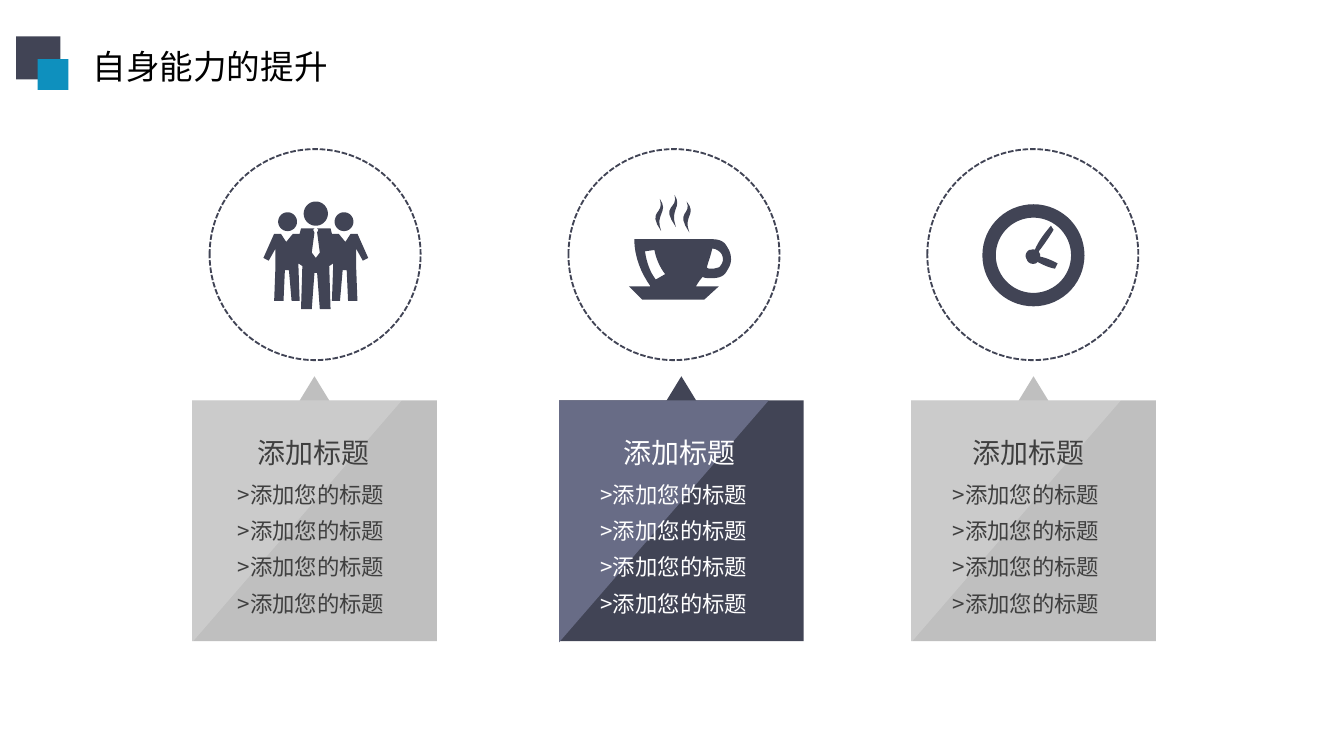
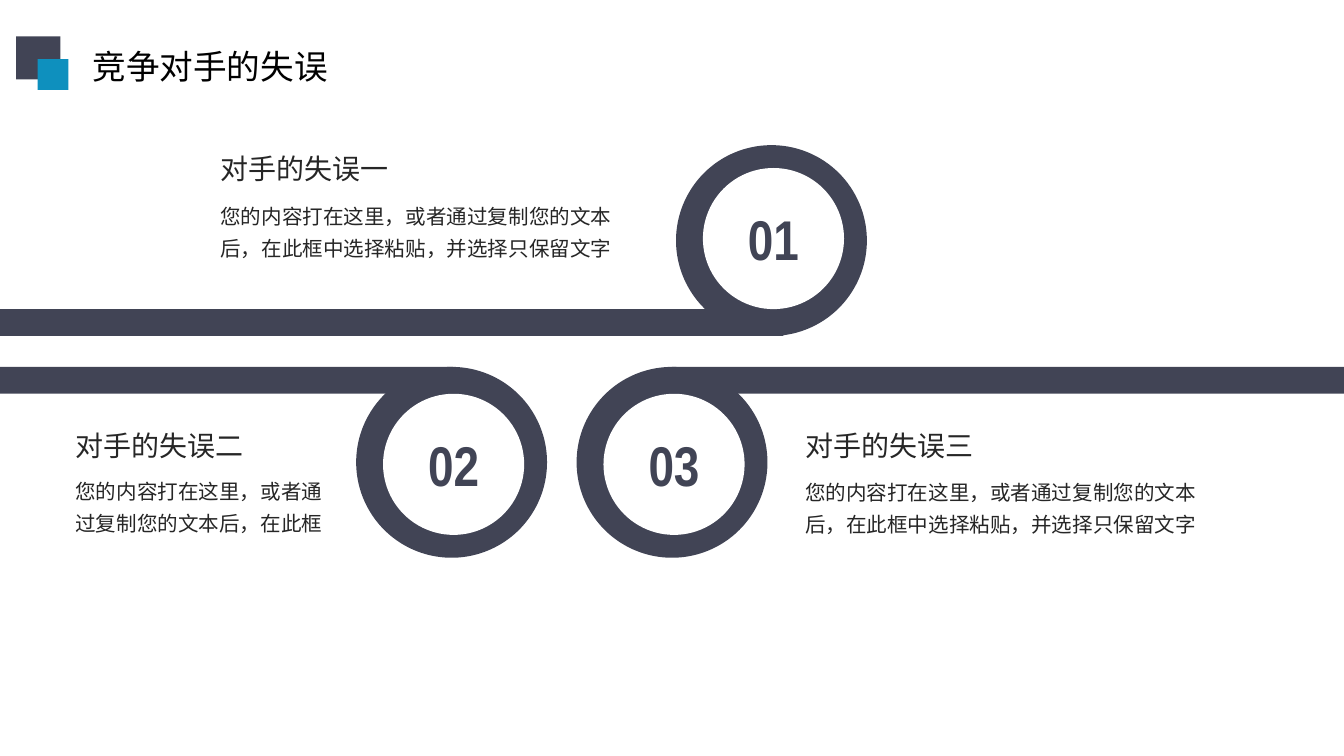
from dataclasses import dataclass
from math import cos, pi, sin

from pptx import Presentation
from pptx.dml.color import RGBColor
from pptx.enum.dml import MSO_LINE
from pptx.enum.shapes import MSO_SHAPE as Preset
from pptx.enum.text import MSO_ANCHOR, MSO_AUTO_SIZE, PP_ALIGN
from pptx.oxml.ns import qn
from pptx.util import Inches, Pt

COLORS = {
    "navy": "414455", "blue": "0E90BE", "violet": "686C86", "silver": "BFBFBF",
    "white": "FFFFFF", "black": "000000", "charcoal": "3F3F3F", "ink": "262626",
}
CJK_FONT = "Noto Sans CJK SC"
NUMBER_FONT = "Arial Narrow"

Point = tuple[float, float]
Contour = list[Point]


@dataclass(frozen=True)
class Card:
    left: float
    heading_left: float
    items_left: float
    body: str
    facet: str
    facet_alpha: int
    ink: str


@dataclass(frozen=True)
class Mistake:
    number: str
    ring_left: float
    ring_top: float
    hole_drop: float
    bar: tuple[float, float, float]  # left, top, width
    text_left: float
    heading_top: float
    text_top: float
    text_width: float
    heading: str
    text: str


CARDS = [
    Card(1.43, 1.82, 1.67, "silver", "white", 20, "charcoal"),
    Card(4.16, 4.54, 4.37, "navy", "violet", 100, "white"),
    Card(6.78, 7.14, 6.99, "silver", "white", 20, "charcoal"),
]
LONG_TEXT = "您的内容打在这里，或者通过复制您的文本后，在此框中选择粘贴，并选择只保留文字"
MISTAKES = [
    Mistake("02", 2.65, 2.73, 0.2, (0, 2.73, 3.37), 0.49, 3.15, 3.47, 2.08,
            "对手的失误二", "您的内容打在这里，或者通过复制您的文本后，在此框"),
    Mistake("01", 5.03, 1.08, 0.17, (0, 2.3, 5.83), 1.57, 1.09, 1.42, 3.17,
            "对手的失误一", LONG_TEXT),
    Mistake("03", 4.29, 2.73, 0.2, (5, 2.73, 5), 5.92, 3.15, 3.48, 3.17,
            "对手的失误三", LONG_TEXT),
]


def rgb(color: str) -> RGBColor:
    return RGBColor.from_string(COLORS[color])


def paint(shape, color: str, alpha: int = 100) -> None:
    """Fill a shape flat, without outline or shadow; alpha is in percent."""
    shape.shadow.inherit = False
    shape.line.fill.background()
    shape.fill.solid()
    shape.fill.fore_color.rgb = rgb(color)
    if alpha < 100:
        tint = shape.fill._xPr.find(qn("a:solidFill"))[0]
        tint.append(tint.makeelement(qn("a:alpha"), {"val": str(alpha * 1000)}))


def add_preset(slide, preset: Preset, left: float, top: float,
               width: float, height: float, color: str):
    shape = slide.shapes.add_shape(
        preset, Inches(left), Inches(top), Inches(width), Inches(height))
    paint(shape, color)
    return shape


def add_outline(slide, contours: list[Contour], color: str, alpha: int = 100) -> None:
    """Draw closed contours as one freeform; inner contours become holes."""
    pens = [[(Inches(x), Inches(y)) for x, y in contour] for contour in contours]
    builder = slide.shapes.build_freeform(*pens[0][0])
    for index, pen in enumerate(pens):
        if index:
            builder.move_to(*pen[0])
        builder.add_line_segments(pen[1:], close=True)
    paint(builder.convert_to_shape(), color, alpha)


def style_runs(paragraph, size: float, color: str, font: str, bold: bool = False) -> None:
    for run in paragraph.runs:
        run.font.size, run.font.bold, run.font.name = Pt(size), bold, font
        run.font.color.rgb = rgb(color)
        props = run._r.get_or_add_rPr()
        latin = props.find(qn("a:latin"))
        latin.addnext(props.makeelement(qn("a:ea"), {"typeface": font}))


def add_text(slide, text: str, left: float, top: float, width: float, height: float,
             size: float, color: str, insets: Point = (0.1, 0.05),
             wrap: bool = False, spacing: float = 1.0) -> None:
    box = slide.shapes.add_textbox(
        Inches(left), Inches(top), Inches(width), Inches(height))
    frame = box.text_frame
    frame.margin_left = frame.margin_right = Inches(insets[0])
    frame.margin_top = frame.margin_bottom = Inches(insets[1])
    frame.word_wrap = wrap
    frame.auto_size = MSO_AUTO_SIZE.SHAPE_TO_FIT_TEXT
    frame.text = text
    frame.paragraphs[0].line_spacing = spacing
    style_runs(frame.paragraphs[0], size, color, CJK_FONT)


def add_header(slide, title: str) -> None:
    add_text(slide, title, 0.59, 0.29, 1.97, 0.4, 18, "black")
    add_preset(slide, Preset.RECTANGLE, 0.12, 0.27, 0.33, 0.32, "navy")
    add_preset(slide, Preset.RECTANGLE, 0.28, 0.44, 0.23, 0.23, "blue")


def disc(x: float, y: float, radius: float, steps: int = 60) -> Contour:
    return [(x + radius * cos(2 * pi * i / steps), y + radius * sin(2 * pi * i / steps))
            for i in range(steps)]


def curved(start: Point, *segments: tuple[Point, ...], steps: int = 8) -> Contour:
    """Flatten segments: one point is a line, three points a cubic curve."""
    contour = [start]
    for segment in segments:
        if len(segment) == 1:
            contour.append(segment[0])
            continue
        knots = (contour[-1], *segment)
        for i in range(1, steps + 1):
            t = i / steps
            weights = ((1 - t) ** 3, 3 * t * (1 - t) ** 2, 3 * t * t * (1 - t), t ** 3)
            contour.append((sum(w * x for w, (x, _) in zip(weights, knots)),
                            sum(w * y for w, (_, y) in zip(weights, knots))))
    return contour


def team_icon() -> list[Contour]:
    middle = 2.35
    # Right half, from the tip of the tie to the crotch, as distance from the middle.
    half = [
        (0, 1.92), (0.03, 1.88), (0.01, 1.73), (0.02, 1.71), (0.01, 1.7), (0.11, 1.7),
        (0.12, 1.74), (0.17, 1.74), (0.22, 1.8), (0.26, 1.74), (0.31, 1.74),
        (0.39, 1.92), (0.35, 1.94), (0.3, 1.85), (0.3, 1.98), (0.31, 2.24),
        (0.24, 2.24), (0.23, 2.01), (0.2, 2.01), (0.18, 2.24), (0.12, 2.24),
        (0.13, 1.96), (0.1, 1.98), (0.11, 2.3), (0.03, 2.3), (0.01, 2.03),
    ]
    bodies = [(middle + dx, y) for dx, y in half]
    bodies += [(middle - dx, y) for dx, y in reversed(half[1:])]
    return [bodies, disc(middle, 1.59, 0.09),
            disc(middle - 0.21, 1.65, 0.07), disc(middle + 0.21, 1.65, 0.07)]


def cup_icon() -> list[Contour]:
    cup_and_saucer = curved(
        (4.72, 1.78), ((5.3, 1.78),),
        ((5.34, 1.78), (5.38, 1.79), (5.4, 1.82)),
        ((5.42, 1.85), (5.44, 1.88), (5.44, 1.93)),
        ((5.44, 1.97), (5.42, 2), (5.4, 2.03)),
        ((5.38, 2.06), (5.34, 2.07), (5.3, 2.07)),
        ((5.27, 2.07), (5.24, 2.07), (5.23, 2.06)),
        ((5.21, 2.08), (5.19, 2.11), (5.18, 2.13)),
        ((5.35, 2.13),), ((5.24, 2.23),), ((4.78, 2.23),), ((4.68, 2.13),), ((4.84, 2.13),),
        ((4.77, 2.03), (4.72, 1.91), (4.72, 1.78)))
    steam = [
        curved((5.13, 1.73), ((5.02, 1.57), (5.15, 1.6), (5.11, 1.5)),
               ((5.19, 1.6), (5.08, 1.6), (5.13, 1.73))),
        curved((5.03, 1.69), ((4.98, 1.55), (5.08, 1.55), (5.02, 1.45)),
               ((5.05, 1.56), (4.91, 1.52), (5.03, 1.69))),
        curved((4.92, 1.72), ((4.81, 1.56), (4.95, 1.6), (4.91, 1.48)),
               ((4.98, 1.58), (4.87, 1.59), (4.92, 1.72))),
    ]
    gleam = curved((4.8, 1.87), ((4.81, 1.95), (4.84, 2.03), (4.88, 2.08)),
                   ((4.95, 2.04),), ((4.91, 1.99), (4.88, 1.92), (4.87, 1.86)))
    handle_hole = curved(
        (5.3, 1.85), ((5.29, 1.9), (5.27, 1.95), (5.26, 1.99)),
        ((5.27, 2), (5.28, 2), (5.3, 2)), ((5.32, 2), (5.34, 1.99), (5.35, 1.99)),
        ((5.37, 1.97), (5.38, 1.95), (5.38, 1.93)),
        ((5.38, 1.91), (5.37, 1.88), (5.35, 1.87)),
        ((5.34, 1.86), (5.32, 1.85), (5.3, 1.85)))
    return [cup_and_saucer, *steam, gleam, handle_hole]


def clock_icon() -> list[Contour]:
    hands = curved(
        (7.74, 1.89), ((7.73, 1.88), (7.73, 1.87), (7.73, 1.87)),
        ((7.77, 1.82), (7.81, 1.76), (7.84, 1.71)), ((7.82, 1.68),),
        ((7.77, 1.74), (7.73, 1.79), (7.7, 1.86)),
        ((7.69, 1.85), (7.68, 1.86), (7.66, 1.86)),
        ((7.64, 1.87), (7.62, 1.9), (7.64, 1.93)),
        ((7.65, 1.96), (7.68, 1.97), (7.71, 1.96)), ((7.72, 1.95),),
        ((7.76, 1.97), (7.8, 1.99), (7.85, 2)), ((7.87, 1.96),),
        ((7.83, 1.94), (7.79, 1.92), (7.74, 1.91)))
    return [disc(7.69, 1.9, 0.38), disc(7.69, 1.9, 0.28), hands]


def add_dashed_circle(slide, left: float) -> None:
    circle = add_preset(slide, Preset.OVAL, left, 1.11, 1.57, 1.57, "white")
    circle.fill.background()
    circle.line.color.rgb = rgb("navy")
    circle.line.width = Pt(1)
    circle.line.dash_style = MSO_LINE.SQUARE_DOT


def add_card(slide, card: Card) -> None:
    left, right, middle = card.left, card.left + 1.82, card.left + 0.91
    tip, top, bottom = 2.8, 2.98, 4.77
    add_outline(slide, [[(middle, tip), (middle + 0.11, top), (right, top),
                         (right, bottom), (left, bottom), (left, top),
                         (middle - 0.11, top)]], card.body)
    add_outline(slide, [[(left, bottom + 0.01), (left + 1.56, top), (left, top)]],
                card.facet, card.facet_alpha)
    add_text(slide, "添加标题", card.heading_left, 3.19, 1.04, 0.35, 15, card.ink)
    for row in range(4):
        add_text(slide, ">添加您的标题", card.items_left, 3.53 + 0.27 * row,
                 1.34, 0.3, 12, card.ink)


def add_ring(slide, mistake: Mistake) -> None:
    """Draw the bar that runs into the ring, the ring and its number."""
    left, top, width = mistake.bar
    add_preset(slide, Preset.RECTANGLE, left, top, width, 0.2, "navy")
    add_preset(slide, Preset.OVAL, mistake.ring_left, mistake.ring_top, 1.42, 1.42, "navy")
    hole = add_preset(slide, Preset.OVAL, mistake.ring_left + 0.2,
                      mistake.ring_top + mistake.hole_drop, 1.05, 1.05, "white")
    frame = hole.text_frame
    frame.margin_top, frame.margin_bottom = Inches(0.04), Inches(0.05)
    frame.vertical_anchor = MSO_ANCHOR.MIDDLE
    frame.text = mistake.number
    frame.paragraphs[0].alignment = PP_ALIGN.CENTER
    style_runs(frame.paragraphs[0], 30, "navy", NUMBER_FONT, bold=True)


def add_mistake_text(slide, mistake: Mistake) -> None:
    insets = (0.07, 0.04)
    add_text(slide, mistake.text, mistake.text_left, mistake.text_top,
             mistake.text_width, 0.53, 11, "ink", insets, wrap=True, spacing=1.3)
    add_text(slide, mistake.heading, mistake.text_left, mistake.heading_top,
             1.41, 0.33, 15, "ink", insets)


def build_skills(slide) -> None:
    for index, icon in enumerate((team_icon(), cup_icon(), clock_icon())):
        add_outline(slide, icon, "navy")
        add_dashed_circle(slide, 1.56 + 2.67 * index)
    for card in CARDS:
        add_card(slide, card)
    add_header(slide, "自身能力的提升")


def build_mistakes(slide) -> None:
    for mistake in MISTAKES:
        add_ring(slide, mistake)
    for mistake in MISTAKES:
        add_mistake_text(slide, mistake)
    add_header(slide, "竞争对手的失误")


def main() -> None:
    deck = Presentation()
    deck.slide_width = Inches(10)
    deck.slide_height = Inches(10 * 9 / 16)
    for build in (build_skills, build_mistakes):
        build(deck.slides.add_slide(deck.slide_layouts[6]))
    deck.save("out.pptx")


if __name__ == "__main__":
    main()
